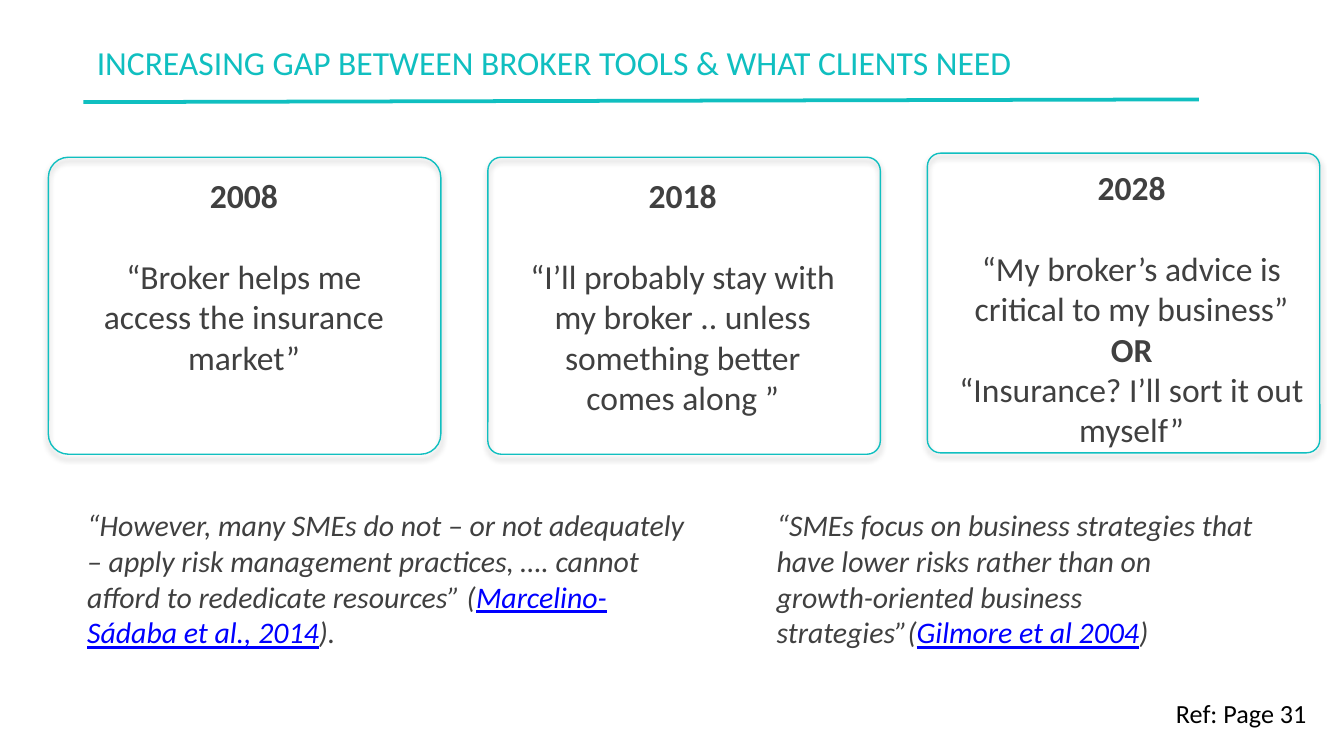
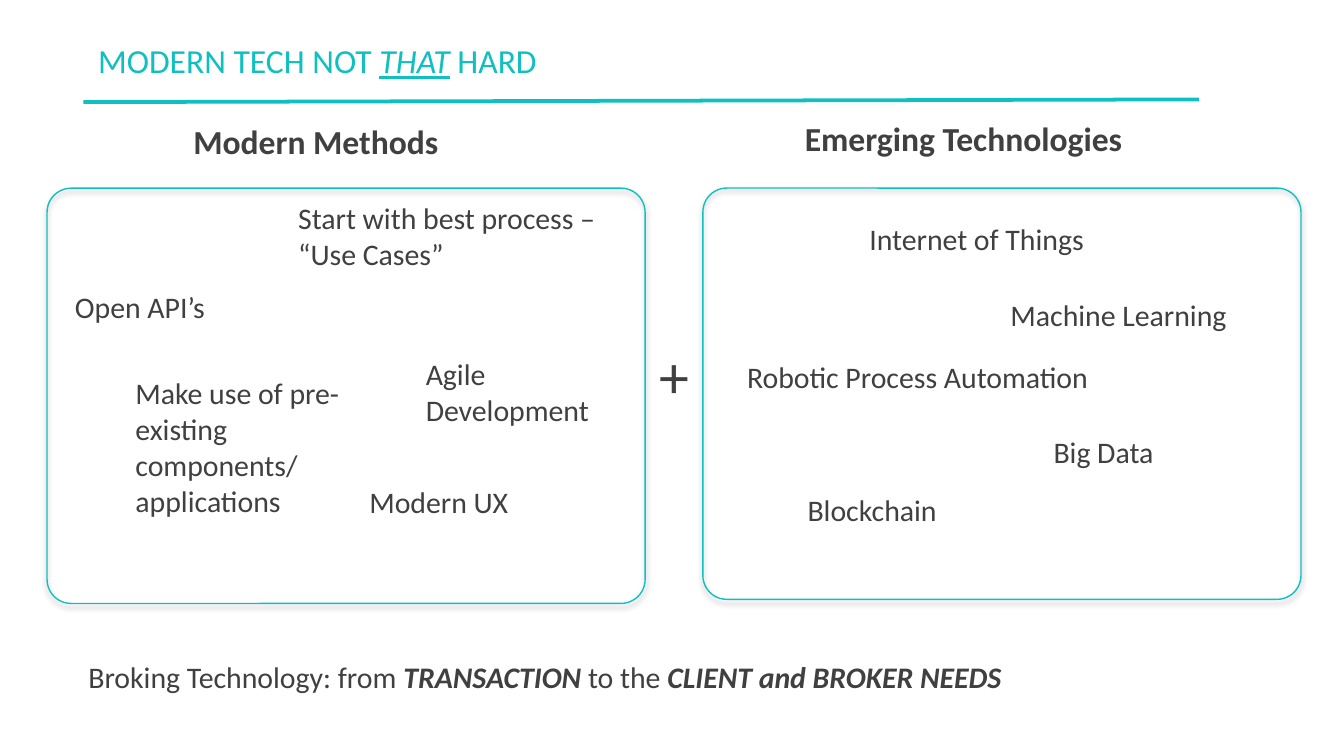
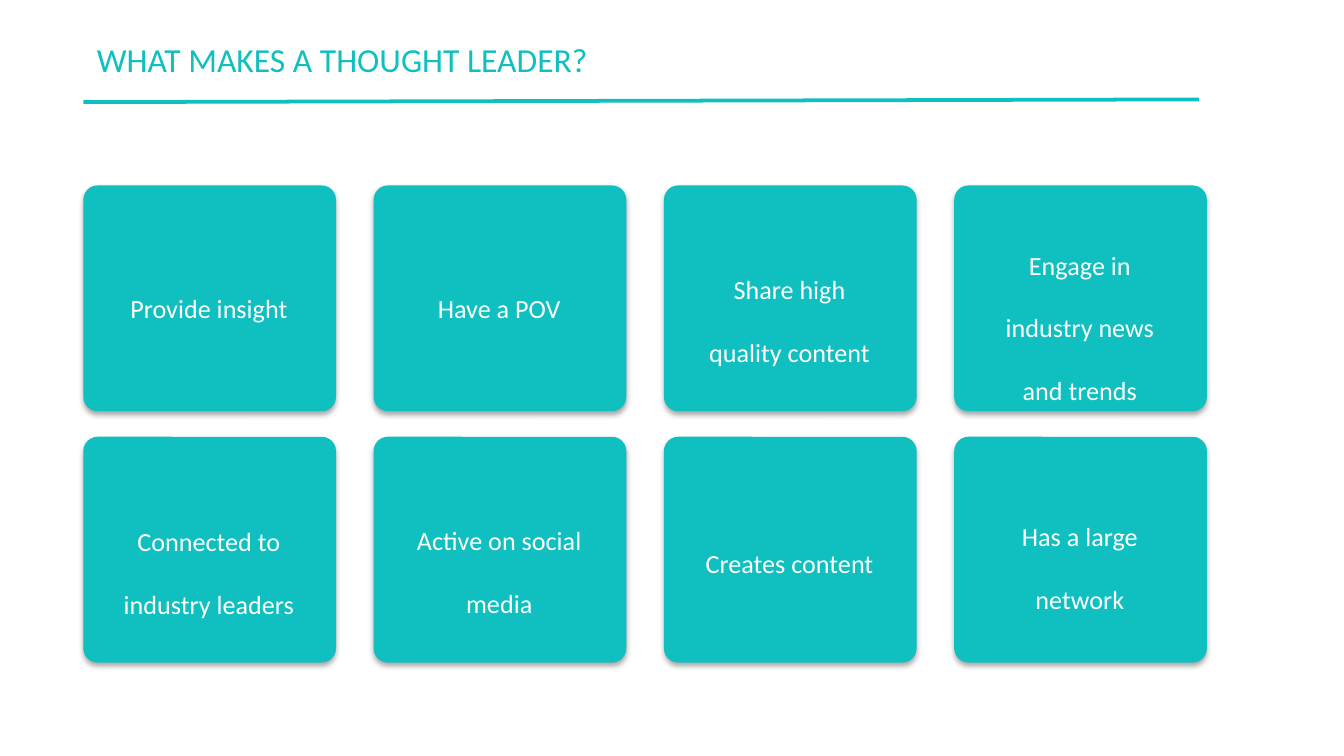
from pptx import Presentation
from pptx.dml.color import RGBColor
from pptx.enum.shapes import MSO_CONNECTOR as Wire, MSO_SHAPE as Form
from pptx.enum.text import MSO_ANCHOR as Anchor, MSO_AUTO_SIZE as Fit, PP_ALIGN as Align
from pptx.oxml import parse_xml
from pptx.oxml.ns import nsdecls, qn
from pptx.util import Inches, Pt

TEAL, GREY, BLUE, BLACK, WHITE = "10BFC0", "404040", "0000FF", "000000", "FFFFFF"
MARKS = {"b": "bold", "i": "italic", "u": "underline"}
hue = RGBColor.from_string


def write(box, paras, size=16, color=GREY, align=Align.LEFT, gap=0, space=None, wrap=True):
    frame = box.text_frame
    look = {"word_wrap": wrap, "auto_size": Fit.SHAPE_TO_FIT_TEXT, "vertical_anchor": Anchor.TOP}
    for key, value in look.items():
        setattr(frame, key, value)
    for n, runs in enumerate(paras):
        para = frame.add_paragraph() if n else frame.paragraphs[0]
        para.alignment = align
        if space:
            para.line_spacing = space
        if n == 1 and gap:
            para.space_before = Pt(gap)
        for text, marks in runs:
            run = para.add_run()
            run.text = text
            style = {"size": Pt(size), "name": "Calibri"}
            style.update({MARKS[m]: True for m in marks if m in MARKS})
            for key, value in style.items():
                setattr(run.font, key, value)
            run.font.color.rgb = hue(BLUE if "k" in marks else color)


def card(shapes, area, round, fill=None):
    shape = shapes.add_shape(Form.ROUNDED_RECTANGLE, *map(Inches, area))
    shape.adjustments[0] = round
    if fill:
        shape.fill.solid()
        shape.fill.fore_color.rgb = hue(fill)
        shape.line.fill.background()
    else:
        shape.fill.background()
        shape.line.color.rgb = hue(TEAL)
        shape.line.width = Pt(0.75)
    shape.shadow.inherit = False
    shape.element.spPr.find(qn("a:effectLst")).append(parse_xml(
        f'<a:outerShdw {nsdecls("a")} blurRad="{Pt(3.1)}" dist="{Pt(1.8)}" dir="5400000" '
        f'rotWithShape="0"><a:srgbClr val="{BLACK}"><a:alpha val="35000"/></a:srgbClr></a:outerShdw>'))


deck = Presentation()
deck.slide_width = Inches(10)
deck.slide_height = deck.slide_width * 9 // 16
layout = deck.slide_layouts[5]

titles = [
    ((0.62, 0.26, 7.07, 0.4), [("INCREASING GAP BETWEEN BROKER TOOLS & WHAT CLIENTS NEED", "")]),
    ((0.63, 0.25, 3.5, 0.4), [("MODERN TECH NOT ", ""), ("THAT", "iu"), (" HARD", "")]),
    ((0.62, 0.24, 3.89, 0.4), [("WHAT MAKES A THOUGHT LEADER?", "")]),
]
pages = []
for area, runs in titles:
    page = deck.slides.add_slide(layout)
    title = page.shapes.title
    title.left, title.top, title.width, title.height = map(Inches, area)
    write(title, [runs], 18, TEAL, wrap=False)
    pages.append(page.shapes)
gap, tech, leader = pages

rule = gap.add_connector(Wire.STRAIGHT, *map(Inches, (0.62, 0.76, 8.92, 0.74)))
rule.line.color.rgb = hue(TEAL)
rule.line.width = Pt(2)
rule.element.spPr.append(parse_xml(f'<a:effectLst {nsdecls("a")}/>'))
layout.shapes.element.append(rule.element)

quotes = [
    ((0.55, 3.72, 4.72, 1.18), [
        ("“However, many SMEs do not – or not adequately – apply risk management practices, "
         "…. cannot afford to rededicate resources” (", "i"),
        ("Marcelino-Sádaba et al., 2014", "iuk"), (").", "i")]),
    ((5.68, 3.72, 3.75, 1.18), [
        ("“SMEs focus on business strategies that have lower risks rather than on "
         "growth-oriented business strategies”(", "i"),
        ("Gilmore et al 2004", "iuk"), (")", "i")]),
]
for area, runs in quotes:
    write(gap.add_textbox(*map(Inches, area)), [runs])

years = [
    ((0.62, 1.25, 2.39, 1.62), (0.36, 1.17, 2.92, 2.21), 0.068, "2008",
     [("“Broker helps me access the insurance market”", "")]),
    ((3.82, 1.25, 2.52, 1.92), (3.63, 1.17, 2.92, 2.21), 0.045, "2018",
     [("“I’ll probably stay with my broker .. unless something better comes along ”", "")]),
    ((7.02, 1.19, 2.8, 2.22), (6.9, 1.14, 2.92, 2.23), 0.044, "2028",
     [("“My broker’s advice is critical to my business”", ""), ("OR", "b"),
      ("“Insurance? I’ll sort it out myself”", "")]),
]
group = gap.add_group_shape().shapes
for area, edge, round, year, lines in years:
    paras = [[(year, "b")]] + [[line] for line in lines]
    write(group.add_textbox(*map(Inches, area)), paras, 18, align=Align.CENTER, gap=22)
    card(group, edge, round)
write(gap.add_textbox(*map(Inches, (7.63, 5.14, 2.19, 0.34))), [[("Ref: Page 31", "")]],
      14, BLACK, Align.RIGHT)

write(tech.add_textbox(*map(Inches, (0.56, 4.85, 9.13, 0.37))), [[
    ("Broking Technology: from ", ""), ("TRANSACTION", "bi"),
    (" to the ", ""), ("CLIENT and BROKER NEEDS", "bi")]])
panels = [
    ((0.35, 1.4, 4.45, 3.09), (1.34, 0.85, 3.46, 0.4), "Modern Methods", [
        ((0.46, 2.1, 1.8, 0.37), "Open API’s"),
        ((2.12, 1.44, 2.51, 0.64), "Start with best process – “Use Cases”"),
        ((3.07, 2.6, 1.8, 0.64), "Agile Development"),
        ((0.91, 2.74, 1.8, 1.18), "Make use of pre-existing components/ applications"),
        ((2.65, 3.55, 1.8, 0.37), "Modern UX")]),
    ((5.23, 1.4, 4.45, 3.06), (5.89, 0.83, 3.46, 0.4), "Emerging Technologies", [
        ((6.37, 1.59, 2.51, 0.37), "Internet of Things"),
        ((7.42, 2.16, 2.51, 0.37), "Machine Learning"),
        ((7.74, 3.18, 1.48, 0.37), "Big Data"),
        ((5.91, 3.61, 1.48, 0.37), "Blockchain"),
        ((5.46, 2.62, 3.31, 0.37), "Robotic Process Automation")]),
]
for edge, top, head, items in panels:
    group = tech.add_group_shape().shapes
    card(group, edge, 0.058)
    write(group.add_textbox(*map(Inches, top)), [[(head, "b")]], 18)
    for area, text in items:
        write(group.add_textbox(*map(Inches, area)), [[(text, "")]])
write(tech.add_textbox(*map(Inches, (4.81, 2.47, 0.45, 0.64))), [[("+", "")]], 32)

traits = [
    ("Provide insight", 1.89, 0.51), ("Have a POV", 1.89, 0.51),
    ("Share high quality content", 1.75, 0.98),
    ("Engage in industry news and trends", 1.57, 1.45),
    ("Connected to industry leaders", 3.63, 0.98), ("Active on social media", 3.62, 0.98),
    ("Creates content", 3.79, 0.51), ("Has a large network", 3.59, 0.98),
]
for n, (text, top, height) in enumerate(traits):
    row, col = divmod(n, 4)
    left = 0.62 + 2.16 * col
    card(leader, (left, 1.38 + 1.87 * row, 1.88, 1.68), 0.063, TEAL)
    write(leader.add_textbox(*map(Inches, (left + 0.17, top, 1.53, height))), [[(text, "")]],
          14, WHITE, Align.CENTER, space=2.0)

deck.save("out.pptx")
